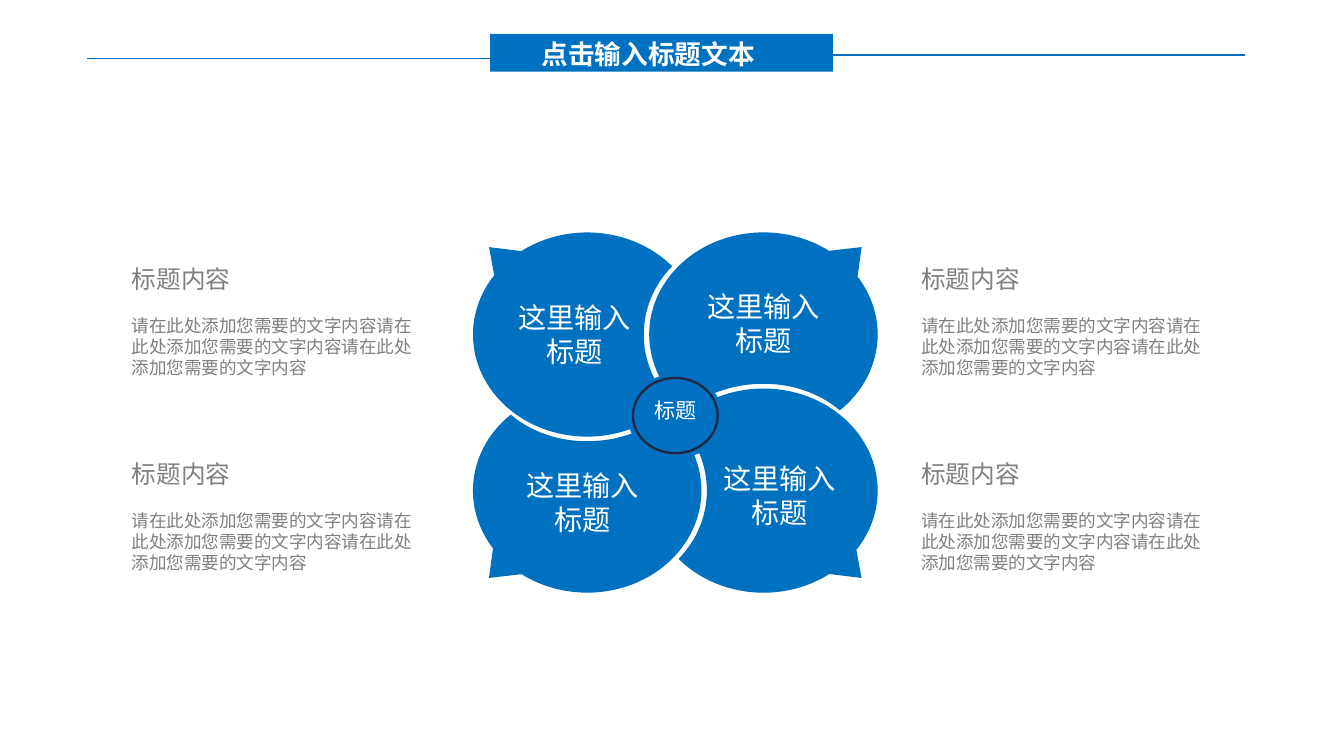
from math import ceil, cos, floor, radians, sin, tan
from typing import NamedTuple

from lxml.etree import SubElement
from pptx import Presentation
from pptx.dml.color import RGBColor
from pptx.enum.shapes import MSO_CONNECTOR, MSO_SHAPE
from pptx.enum.text import MSO_ANCHOR, MSO_AUTO_SIZE, PP_ALIGN
from pptx.oxml.ns import qn
from pptx.util import Pt

HUES = {"blue": "0070C0", "rule": "006EBC", "navy": "212745",
        "gray": "808080", "white": "FFFFFF"}
NOTO, LATIN = "Noto Sans CJK SC", "Calibri"
MID = (361.8, 221.04)      # centre of the flower
OFF = (47.2, 41.8)         # petal centre from the flower centre
OUTER = (61.2, 54.7)       # petal radii
BITE = (64.1, 57.2)        # radii of the cut made by the next petal
TIP = (99.8, 88.6)         # tail tip from the flower centre
GRAIN = 100                # outline units in a point
FRAME = {"word_wrap": True, "auto_size": MSO_AUTO_SIZE.NONE,
         "vertical_anchor": MSO_ANCHOR.TOP}
BARE = {"margin_left": 0, "margin_top": 0, "margin_right": 0, "margin_bottom": 0}
PLACE = ("left", "top", "width", "height")


class Box(NamedTuple):
    x: float
    y: float
    w: float
    h: float


class Petal(NamedTuple):
    side: int        # -1 left, 1 right of the centre
    arcs: tuple      # outer arcs before and after the tail, in degrees
    cut: tuple       # centre of the bite, in units of OFF
    bite: tuple      # bite arc, in degrees
    flip: int        # -1 turns the petal half round


class Label(NamedTuple):
    text: str
    box: Box
    size: float


class Rule(NamedTuple):
    x: float
    y: float
    end: float


def hue(name: str) -> RGBColor:
    return RGBColor.from_string(HUES[name])


def apply(item, form: dict) -> None:
    for key, val in form.items():
        setattr(item, key, val)


def place(item, box: Box) -> None:
    apply(item, dict(zip(PLACE, map(Pt, box))))


def write(para, text: str, size: float, color: str, font: str,
          bold: bool = False, **form) -> None:
    run = para.add_run()
    run.text = text
    apply(run.font, {"size": Pt(size), "name": font, "bold": bold})
    run.font.color.rgb = hue(color)
    apply(para, {"space_before": Pt(0), **form})


def plain(para) -> None:
    props = para._p.get_or_add_pPr()
    props.set("marL", "0")
    props.set("indent", "0")
    SubElement(props, qn("a:buNone"))


def arc(mid: tuple, radii: tuple, span: tuple) -> list:
    """Bezier steps of an ellipse arc, split at the quarter turns."""
    def spot(turn: float, lean: float = 0) -> tuple:
        return (mid[0] + radii[0] * (cos(turn) - lean * sin(turn)),
                mid[1] + radii[1] * (sin(turn) + lean * cos(turn)))

    low, high = sorted(span)
    cuts = [90 * i for i in range(floor(low / 90) + 1, ceil(high / 90))]
    stops = [radians(a) for a in sorted([low, *cuts, high], reverse=span[0] > span[1])]
    steps = [(spot(stops[0]),)]
    for a, b in zip(stops, stops[1:]):
        lean = 4 / 3 * tan((b - a) / 4)
        steps.append((spot(a, lean), spot(b, -lean), spot(b)))
    return steps


def draw_petal(shapes, petal: Petal) -> None:
    mid = (petal.side * OFF[0], OFF[1])
    cut = (petal.cut[0] * OFF[0], petal.cut[1] * OFF[1])
    steps = (arc(mid, OUTER, petal.arcs[0]) + [((petal.side * TIP[0], TIP[1]),)]
             + arc(mid, OUTER, petal.arcs[1]) + arc(cut, BITE, petal.bite)[1:])
    steps = [[tuple(round(GRAIN * (m + petal.flip * v)) for m, v in zip(MID, dot))
              for dot in step] for step in steps]
    ends = [step[-1] for step in steps]
    pen = shapes.build_freeform(*ends[0], scale=Pt(1) / GRAIN)
    pen.add_line_segments(ends[1:], close=True)
    shape = pen.convert_to_shape()
    # Turn the straight steps of the arcs into curves
    left, top = (min(axis) for axis in zip(*ends))
    for node, step in zip(list(shape._element.iter(qn("a:lnTo"))), steps[1:]):
        if len(step) == 3:
            node.tag = qn("a:cubicBezTo")
            for i, (x, y) in enumerate(step[:2]):
                knot = SubElement(node, qn("a:pt"), x=str(x - left), y=str(y - top))
                node.insert(i, knot)
    paint(shape, "blue")


def paint(shape, color: str) -> None:
    shape.shadow.inherit = False
    shape.fill.solid()
    shape.fill.fore_color.rgb = hue(color)
    shape.line.fill.background()


def draw_label(shapes, label: Label) -> None:
    frame = shapes.add_textbox(*map(Pt, label.box)).text_frame
    apply(frame, {**FRAME, **BARE})
    write(frame.paragraphs[0], label.text, label.size, "white", NOTO,
          alignment=PP_ALIGN.CENTER)


def draw_rule(shapes, rule: Rule) -> None:
    line = shapes.add_connector(MSO_CONNECTOR.STRAIGHT, Pt(rule.x), Pt(rule.y),
                                Pt(rule.end), Pt(rule.y))
    line.line.width = Pt(0.75)
    line.line.color.rgb = hue("rule")
    SubElement(line._element.spPr, qn("a:effectLst"))


def fill_note(holder, box: Box) -> None:
    place(holder, box)
    frame = holder.text_frame
    apply(frame, {**FRAME, **BARE})
    head, body = frame.paragraphs[0], frame.add_paragraph()
    plain(head)
    plain(body)
    write(head, "标题内容", 13.2, "gray", LATIN)
    write(body, "请在此处添加您需要的文字内容" * 3, 9.38, "gray", LATIN,
          space_before=Pt(11.3))


PETALS = [Petal(side, arcs, cut, bite, flip) for flip in (1, -1)
          for side, arcs, cut, bite in (
              (1, ((222, 395.5), (54.8, 138)), (-1, 1), (40, -40)),
              (-1, ((-48, 125), (145.5, 228)), (-1, -1), (130, 50)))]
LABELS = [
    Label("标题", Box(349.9, 213.1, 23.8, 13.7), 11.3),
    Label("这里输入标题", Box(272.9, 160.8, 69.8, 36.7), 15.1),
    Label("这里输入标题", Box(377, 154.8, 64.1, 36.7), 15.1),
    Label("这里输入标题", Box(276.1, 251, 72, 36.7), 15.1),
    Label("这里输入标题", Box(384.5, 247, 66.2, 36.7), 15.1),
]
RULES = [Rule(46.8, 31.5, 268.6), Rule(445, 29.5, 666.9)]
NOTES = [Box(x, y, 156.2, 61.2) for y in (141.5, 245.8) for x in (70.6, 493.5)]

deck = Presentation()
apply(deck, {"slide_width": Pt(720), "slide_height": Pt(405)})
# Comparison layout: one title and four bodies
slide = deck.slides.add_slide(deck.slide_layouts[4])
shapes = slide.shapes
title, *bodies = slide.placeholders

# Side notes
for holder, box in zip(bodies, NOTES):
    fill_note(holder, box)

# Flower
for petal in PETALS:
    draw_petal(shapes, petal)
disc = shapes.add_shape(MSO_SHAPE.OVAL, *map(Pt, Box(336.2, 200.4, 51.1, 45.4)))
paint(disc, "blue")
for label in LABELS:
    draw_label(shapes, label)
ring = shapes.add_shape(MSO_SHAPE.OVAL, *map(Pt, Box(339.1, 202.5, 45.4, 40.3)))
ring.shadow.inherit = False
ring.fill.background()
ring.line.width = Pt(1.25)
ring.line.color.rgb = hue("navy")

# Header: bar, title above it, rules
bar = shapes.add_shape(MSO_SHAPE.RECTANGLE, *map(Pt, Box(262.6, 18.2, 183.6, 20.2)))
paint(bar, "blue")
place(title, Box(283, 16.6, 133.9, 24.5))
apply(title.text_frame, FRAME)
write(title.text_frame.paragraphs[0], "点击输入标题文本", 14.25, "white", NOTO,
      bold=True, alignment=PP_ALIGN.LEFT)
bar._element.addnext(title._element)
for rule in RULES:
    draw_rule(shapes, rule)

deck.save("out.pptx")
